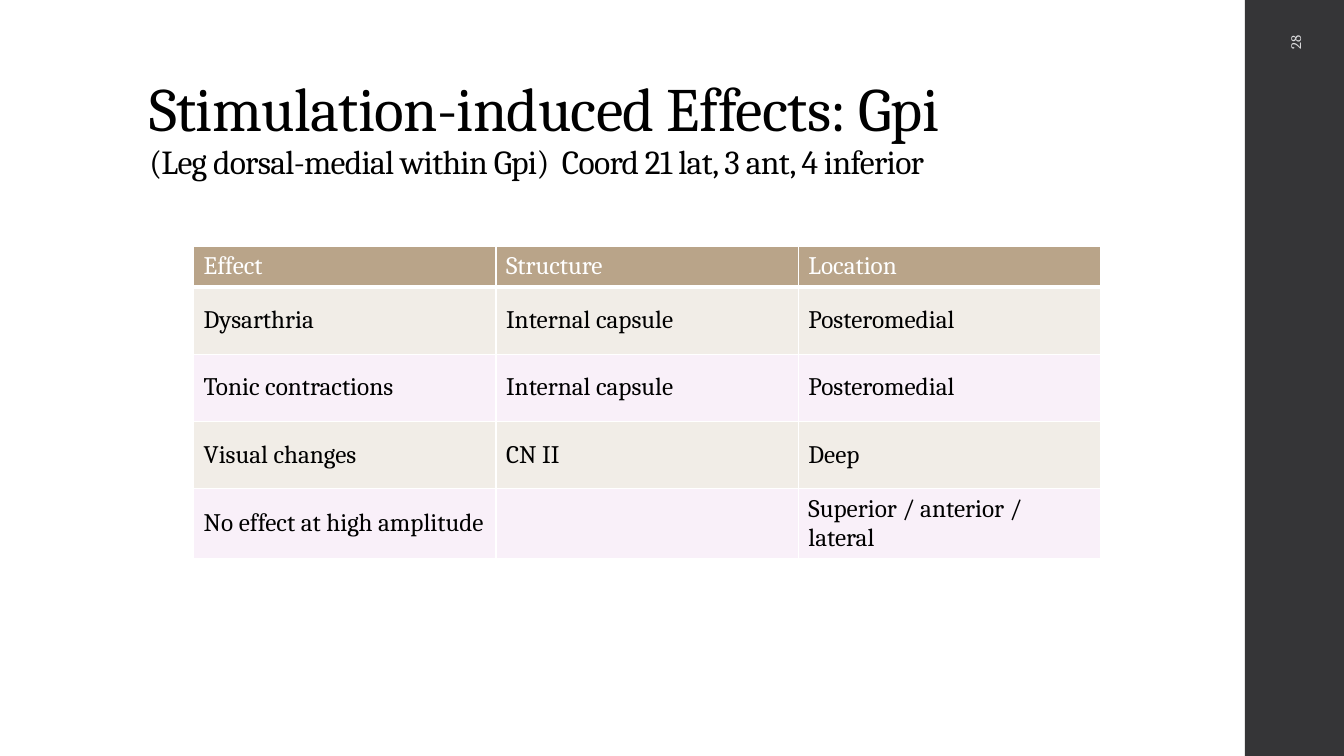
from dataclasses import dataclass

from lxml import etree
from pptx import Presentation
from pptx.dml.color import RGBColor
from pptx.enum.shapes import MSO_SHAPE
from pptx.enum.text import MSO_ANCHOR, MSO_AUTO_SIZE, PP_ALIGN
from pptx.oxml.ns import qn
from pptx.util import Cm, Pt

RECTANGLE = MSO_SHAPE.RECTANGLE
TOP, MIDDLE, BOTTOM = MSO_ANCHOR.TOP, MSO_ANCHOR.MIDDLE, MSO_ANCHOR.BOTTOM
LEFT, RIGHT = PP_ALIGN.LEFT, PP_ALIGN.RIGHT
NO_AUTOFIT = MSO_AUTO_SIZE.NONE

WHITE = RGBColor(0xFF, 0xFF, 0xFF)
BLACK = RGBColor(0x00, 0x00, 0x00)
CHARCOAL = RGBColor(0x35, 0x35, 0x37)
SILVER = RGBColor(0xD9, 0xD9, 0xDB)
TAN = RGBColor(0xB9, 0xA4, 0x89)
CREAM = RGBColor(0xF1, 0xED, 0xE7)
LILAC = RGBColor(0xF9, 0xF0, 0xF9)

FONT = "Cambria"
SLIDE_WIDTH, SLIDE_HEIGHT = Cm(33.87), Cm(19.05)
SIDEBAR_LEFT = Cm(31.37)
HEADER_HEIGHT, EFFECT_HEIGHT = Cm(0.97), Cm(1.69)
COLUMN_WIDTH = Cm(7.62)


@dataclass(frozen=True)
class EffectRow:
    effect: str
    structure: str
    location: str


HEADINGS = EffectRow("Effect", "Structure", "Location")
EFFECTS = (
    EffectRow("Dysarthria", "Internal capsule", "Posteromedial"),
    EffectRow("Tonic contractions", "Internal capsule", "Posteromedial"),
    EffectRow("Visual changes", "CN II", "Deep"),
    EffectRow("No effect at high amplitude", "", "Superior / anterior / lateral"),
)


def write(paragraph, text: str, *, size: float, color: RGBColor = BLACK,
          align=LEFT, spacing: int = 0) -> None:
    paragraph.alignment = align
    run = paragraph.add_run()
    run.text = text
    run.font.name = FONT
    run.font.size = Pt(size)
    run.font.bold = False
    run.font.color.rgb = color
    if spacing:
        run.font._element.set("spc", str(spacing))


def add_border(cell, side: str, points: float) -> None:
    line = etree.SubElement(cell._tc.get_or_add_tcPr(), qn(f"a:ln{side}"), w=str(Pt(points)))
    fill = etree.SubElement(line, qn("a:solidFill"))
    etree.SubElement(fill, qn("a:srgbClr"), val=str(WHITE))


def add_sidebar(slide) -> None:
    sidebar = slide.shapes.add_shape(
        RECTANGLE, SIDEBAR_LEFT, 0, SLIDE_WIDTH - SIDEBAR_LEFT, SLIDE_HEIGHT)
    sidebar.shadow.inherit = False
    sidebar.fill.solid()
    sidebar.fill.fore_color.rgb = CHARCOAL
    sidebar.line.fill.background()


def add_title(slide) -> None:
    title = slide.shapes.title
    title.left, title.top, title.width, title.height = Cm(3.51), Cm(1.02), Cm(26.92), Cm(3.68)
    frame = title.text_frame
    frame.auto_size = NO_AUTOFIT
    frame.word_wrap = True
    frame.vertical_anchor = BOTTOM
    heading = frame.paragraphs[0]
    heading.line_spacing = 0.9
    write(heading, "Stimulation-induced Effects: Gpi ", size=44, spacing=-50)
    heading.add_line_break()
    write(heading, "(Leg dorsal-medial within Gpi)  Coord 21 lat, 3 ant, 4 inferior",
          size=24, spacing=-50)


def add_page_number(slide) -> None:
    page_number = slide.shapes.add_textbox(Cm(30), Cm(2.77), Cm(5.28), Cm(1.02))
    page_number.rotation = 270
    frame = page_number.text_frame
    frame.word_wrap = True
    frame.vertical_anchor = MIDDLE
    write(frame.paragraphs[0], "28", size=10.5, color=SILVER, align=RIGHT)


def add_effects_table(slide) -> None:
    rows = (HEADINGS, *EFFECTS)
    height = HEADER_HEIGHT + EFFECT_HEIGHT * len(EFFECTS)
    table = slide.shapes.add_table(
        len(rows), 3, Cm(4.88), Cm(6.22), COLUMN_WIDTH * 3, height).table
    for column in table.columns:
        column.width = COLUMN_WIDTH
    for index, row in enumerate(rows):
        is_header = index == 0
        table.rows[index].height = HEADER_HEIGHT if is_header else EFFECT_HEIGHT
        band = TAN if is_header else (LILAC, CREAM)[index % 2]
        for column, text in enumerate((row.effect, row.structure, row.location)):
            cell = table.cell(index, column)
            cell.vertical_anchor = TOP if is_header else MIDDLE
            for side in "LRTB":
                under_header = (index, side) in ((0, "B"), (1, "T"))
                add_border(cell, side, 3 if under_header else 1)
            cell.fill.solid()
            cell.fill.fore_color.rgb = band
            if text:
                write(cell.text_frame.paragraphs[0], text, size=18,
                      color=WHITE if is_header else BLACK)


def main() -> None:
    presentation = Presentation()
    presentation.slide_width, presentation.slide_height = SLIDE_WIDTH, SLIDE_HEIGHT
    slide = presentation.slides.add_slide(presentation.slide_layouts.get_by_name("Title Only"))
    add_sidebar(slide)
    add_title(slide)
    add_page_number(slide)
    add_effects_table(slide)
    presentation.save("out.pptx")


if __name__ == "__main__":
    main()
